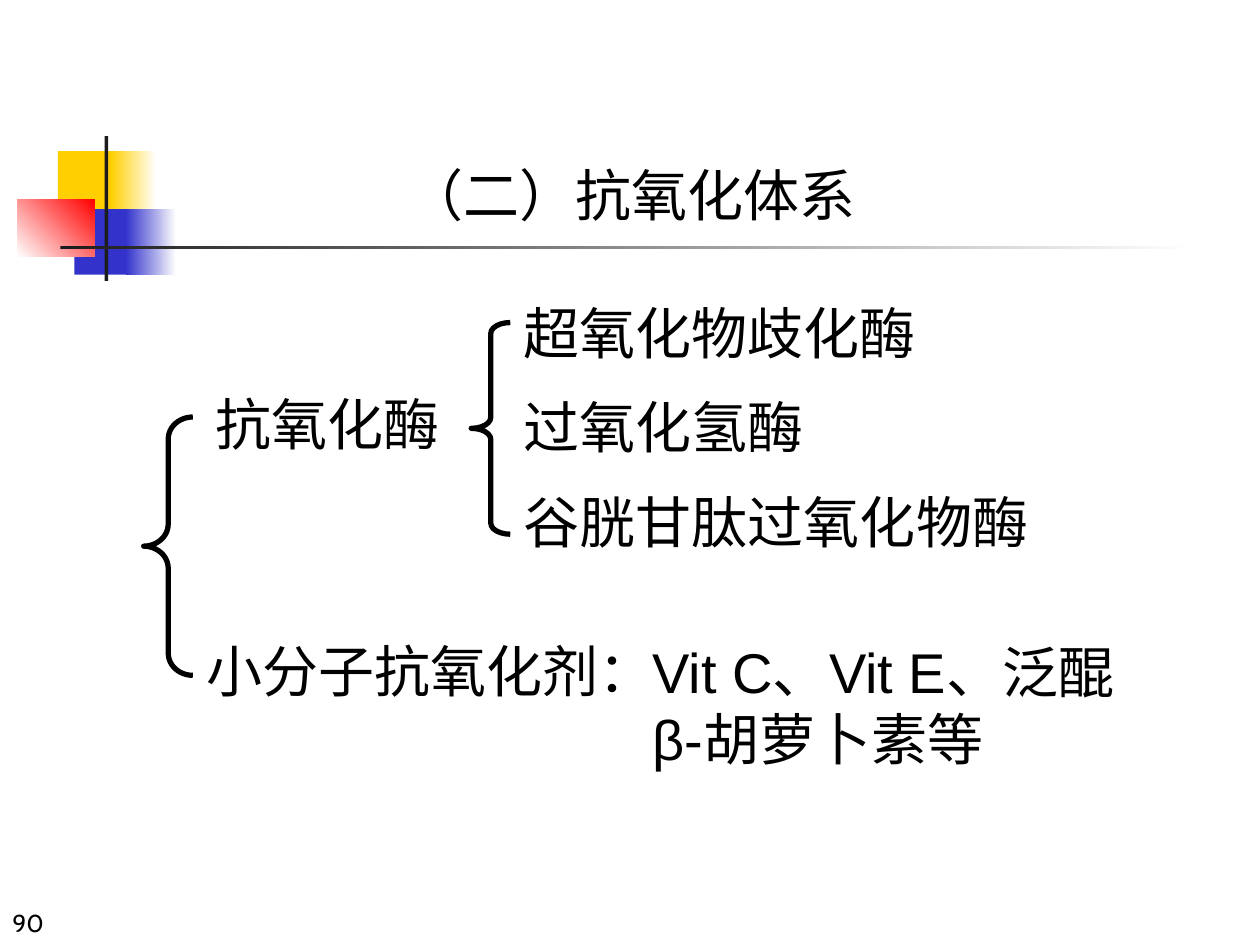
from lxml.etree import SubElement
from pptx import Presentation
from pptx.dml.color import RGBColor
from pptx.enum.shapes import MSO_SHAPE
from pptx.enum.text import MSO_ANCHOR, MSO_AUTO_SIZE, PP_ALIGN
from pptx.oxml.ns import qn
from pptx.util import Inches, Pt

COLORS = {
    "yellow": "FFCF01",
    "blue": "3333CC",
    "red": "FF0000",
    "dark": "1C1C1C",
    "white": "FFFFFF",
    "text": "000000",
}
HAN_FONT = "Noto Sans CJK SC"
LATIN_FONT = "Arial"
NUMBER_FONT = "Cabin"


def rgb(name):
    return RGBColor.from_string(COLORS[name])


def add_block(slide, box, color, fade_to=None, angle=0):
    """Add a borderless rectangle, solid or fading to a second colour."""
    block = slide.shapes.add_shape(MSO_SHAPE.RECTANGLE, *map(Inches, box))
    block.shadow.inherit = False
    block.line.fill.background()
    if fade_to is None:
        block.fill.solid()
        block.fill.fore_color.rgb = rgb(color)
        return
    block.fill.gradient()
    block.fill.gradient_angle = angle
    for stop, name in zip(block.fill.gradient_stops, (color, fade_to)):
        stop.color.rgb = rgb(name)


def add_brace(slide, box, curl):
    brace = slide.shapes.add_shape(MSO_SHAPE.LEFT_BRACE, *map(Inches, box))
    brace.shadow.inherit = False
    brace.adjustments[0] = curl
    brace.fill.background()
    brace.line.color.rgb = rgb("text")
    brace.line.width = Pt(3)


def write_text(holder, text, font, size=32, align=PP_ALIGN.LEFT, anchor=MSO_ANCHOR.TOP):
    frame = holder.text_frame
    frame.text = text
    frame.word_wrap = True
    frame.auto_size = MSO_AUTO_SIZE.NONE
    frame.vertical_anchor = anchor
    paragraph = frame.paragraphs[0]
    paragraph.alignment = align
    for run in paragraph.runs:
        run.font.name = font
        run.font.size = Pt(size)
        run.font.color.rgb = rgb("text")
        east_asian = SubElement(run.font._element, qn("a:ea"))
        east_asian.set("typeface", HAN_FONT)


def add_label(slide, box, text, font, **style):
    write_text(slide.shapes.add_textbox(*map(Inches, box)), text, font, **style)


def add_title(slide, text):
    title = slide.shapes.title
    title.left, title.top = Inches(1.46), Inches(1.22)
    title.width, title.height = Inches(7.11), Inches(0.64)
    write_text(title, text, HAN_FONT, align=PP_ALIGN.CENTER)


def add_ornament(slide):
    add_block(slide, (0.46, 1.2, 0.48, 0.52), "yellow")
    add_block(slide, (0.88, 1.2, 0.36, 0.52), "yellow", "white")
    add_block(slide, (0.59, 1.66, 0.46, 0.52), "blue")
    add_block(slide, (1, 1.66, 0.4, 0.52), "blue", "white")
    add_block(slide, (0.14, 1.58, 0.61, 0.46), "white", "red", angle=45)
    add_block(slide, (0.83, 1.08, 0.03, 1.15), "dark")
    add_block(slide, (0.48, 1.95, 9, 0.03), "dark", "white")


def main():
    prs = Presentation()
    prs.slide_width, prs.slide_height = Inches(10), Inches(7.5)
    slide = prs.slides.add_slide(prs.slide_layouts[5])

    # Corner ornament, title and page number
    add_ornament(slide)
    add_title(slide, "（二）抗氧化体系")
    add_label(slide, (0, 6.99, 0.63, 0.5), "90", NUMBER_FONT,
              size=14, anchor=MSO_ANCHOR.BOTTOM)

    # Two branches of the antioxidant system
    add_brace(slide, (1.14, 3.31, 0.39, 2.05), 0.45)
    add_label(slide, (1.61, 3.04, 2.44, 0.64), "抗氧化酶", HAN_FONT)
    add_label(slide, (1.54, 5, 3.78, 0.64), "小分子抗氧化剂：", HAN_FONT)

    # Antioxidant enzymes
    add_brace(slide, (3.74, 2.56, 0.31, 1.68), 0.28)
    enzymes = ("超氧化物歧化酶", "过氧化氢酶", "谷胱甘肽过氧化物酶")
    for row, enzyme in enumerate(enzymes):
        add_label(slide, (4.06, 2.32 + 0.75 * row, 4.8, 0.64), enzyme, LATIN_FONT)

    # Small-molecule antioxidants
    add_label(slide, (5.08, 5.01, 4.02, 1.18),
              "Vit C、Vit E、泛醌β-胡萝卜素等", LATIN_FONT)

    prs.save("out.pptx")


if __name__ == "__main__":
    main()
